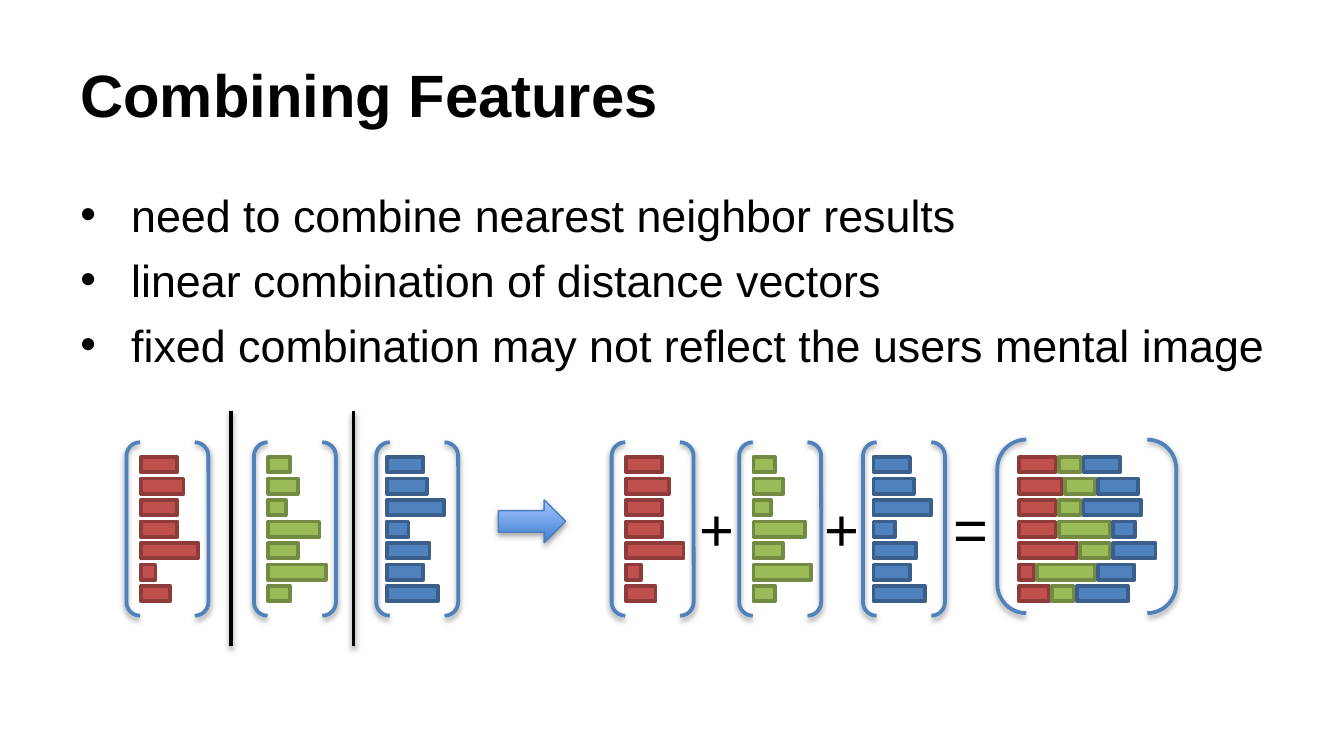
from lxml import etree
from pptx import Presentation
from pptx import util as u
from pptx.dml.color import RGBColor
from pptx.enum import shapes, text
from pptx.oxml.ns import qn

COLOURS = {
    "ink": "000000",
    "red": "C0504D", "red edge": "8E3B39",
    "green": "9BBB59", "green edge": "738A42",
    "blue": "4F81BD", "blue edge": "3A5F8C",
    "arrow edge": "4B7EBC", "arrow dark": "3F80CE", "arrow light": "A4C4FF",
}
FEATURES = {
    "red": [0.69, 0.81, 0.69, 0.69, 1.09, 0.28, 0.56],
    "green": [0.41, 0.56, 0.33, 0.97, 0.56, 1.09, 0.41],
    "blue": [0.69, 0.76, 1.09, 0.41, 0.81, 0.69, 0.97],
}
BULLETS = [
    "need to combine nearest neighbor results",
    "linear combination of distance vectors",
    "fixed combination may not reflect the users mental image",
]
ROW_TOP, ROW_PITCH, BAR_HEIGHT, STACK_GAP = 8.64, 0.406, 0.29, 0.06
BRACKET_TOP, BRACKET_WIDTH, BRACKET_HEIGHT = 8.36, 1.55, 3.28


def colour(name):
    return RGBColor.from_string(COLOURS[name])


class FeatureSlide:
    font_name = "Arial"
    line_width = u.Pt(2)

    def __init__(self, page):
        self.page = page

    def box(self, left, top, width, height, wrap=True):
        box = self.page.shapes.add_textbox(u.Cm(left), u.Cm(top), u.Cm(width), u.Cm(height))
        box.text_frame.word_wrap = wrap
        return box.text_frame

    def span(self, para, words, size, bold=False):
        span = para.add_run()
        span.text = words
        span.font.name = self.font_name
        span.font.size = u.Pt(size)
        span.font.bold = bold
        span.font.color.rgb = colour("ink")

    def title(self, words):
        frame = self.box(1.27, 0.58, 22.86, 2.39)
        frame.vertical_anchor = text.MSO_ANCHOR.MIDDLE
        self.span(frame.paragraphs[0], words, 32, bold=True)

    def bullets(self, lines):
        frame = self.box(1.27, 3.42, 23.5, 9.3)
        for index, words in enumerate(lines):
            para = frame.add_paragraph() if index else frame.paragraphs[0]
            properties = para._p.get_or_add_pPr()
            properties.set("marL", str(u.Cm(0.96)))
            properties.set("indent", str(u.Cm(-0.96)))
            etree.SubElement(properties, qn("a:buFont")).set("typeface", self.font_name)
            etree.SubElement(properties, qn("a:buChar")).set("char", "•")
            if index:
                para.space_before = u.Pt(6)
            self.span(para, words, 24)

    def operator(self, sign, left):
        frame = self.box(left, 9.17, 1.17, 1.63, wrap=False)
        self.span(frame.paragraphs[0], sign, 32)

    def shadow(self, item, opacity=38, distance=1.6):
        properties = item._element.spPr
        effects = properties.find(qn("a:effectLst"))
        if effects is None:
            effects = etree.SubElement(properties, qn("a:effectLst"))
        outer = etree.SubElement(
            effects, qn("a:outerShdw"), blurRad=str(u.Pt(3.1)), dist=str(u.Pt(distance)),
            dir="5400000", rotWithShape="0")
        tint = etree.SubElement(outer, qn("a:srgbClr"), val=COLOURS["ink"])
        etree.SubElement(tint, qn("a:alpha"), val=str(opacity * 1000))

    def shape(self, kind, left, top, width, height, edge, line_width=None):
        shape = self.page.shapes.add_shape(
            kind, u.Cm(left), u.Cm(top), u.Cm(width), u.Cm(height))
        shape.shadow.inherit = False
        shape.line.color.rgb = colour(edge)
        shape.line.width = line_width or self.line_width
        return shape

    def bar(self, name, row, left, width):
        bar = self.shape(shapes.MSO_SHAPE.RECTANGLE, left, ROW_TOP + row * ROW_PITCH,
                         width, BAR_HEIGHT, f"{name} edge")
        bar.fill.solid()
        bar.fill.fore_color.rgb = colour(name)

    def bracket(self, left, top=BRACKET_TOP, width=BRACKET_WIDTH):
        bracket = self.shape(shapes.MSO_SHAPE.DOUBLE_BRACKET, left, top,
                             width, BRACKET_HEIGHT, "blue")
        bracket.fill.background()
        self.shadow(bracket)

    def vector(self, name, left, inset):
        self.bracket(left)
        for row, width in enumerate(FEATURES[name]):
            self.bar(name, row, left + inset, width)

    def combined_vector(self, left):
        self.bracket(left, top=8.31, width=3.38)
        for row, widths in enumerate(zip(*FEATURES.values())):
            start = left + 0.41
            for name, width in zip(FEATURES, widths):
                width = max(width, 0.41) if name == "green" else width
                self.bar(name, row, start, width)
                start += width + STACK_GAP

    def divider(self, left):
        line = self.page.shapes.add_connector(
            shapes.MSO_CONNECTOR.STRAIGHT, u.Cm(left), u.Cm(7.77), u.Cm(left), u.Cm(12.22))
        line.line.color.rgb = colour("ink")
        line.line.width = self.line_width
        self.shadow(line)

    def arrow(self):
        arrow = self.shape(shapes.MSO_SHAPE.RIGHT_ARROW, 9.42, 9.45, 1.27, 0.81,
                           "arrow edge", u.Pt(0.75))
        arrow.fill.gradient()
        arrow.fill.gradient_angle = 90
        for stop, name in zip(arrow.fill.gradient_stops, ("arrow dark", "arrow light")):
            stop.color.rgb = colour(name)
        self.shadow(arrow, opacity=35, distance=1.8)


def main():
    deck = Presentation()
    deck.slide_width, deck.slide_height = u.Cm(25.4), u.Cm(14.29)
    slide = FeatureSlide(deck.slides.add_slide(deck.slide_layouts[6]))
    slide.title("Combining Features")
    slide.bullets(BULLETS)
    for left in (4.37, 6.68):
        slide.divider(left)
    insets = (0.27, 0.27, 0.2)
    for lefts in ((2.39, 4.8, 7.11), (11.56, 13.97, 16.31)):
        for name, left, inset in zip(FEATURES, lefts, insets):
            slide.vector(name, left, inset)
    slide.arrow()
    for sign, left in (("+", 12.98), ("+", 15.34), ("=", 17.78)):
        slide.operator(sign, left)
    slide.combined_vector(18.85)
    deck.save("out.pptx")


if __name__ == "__main__":
    main()
